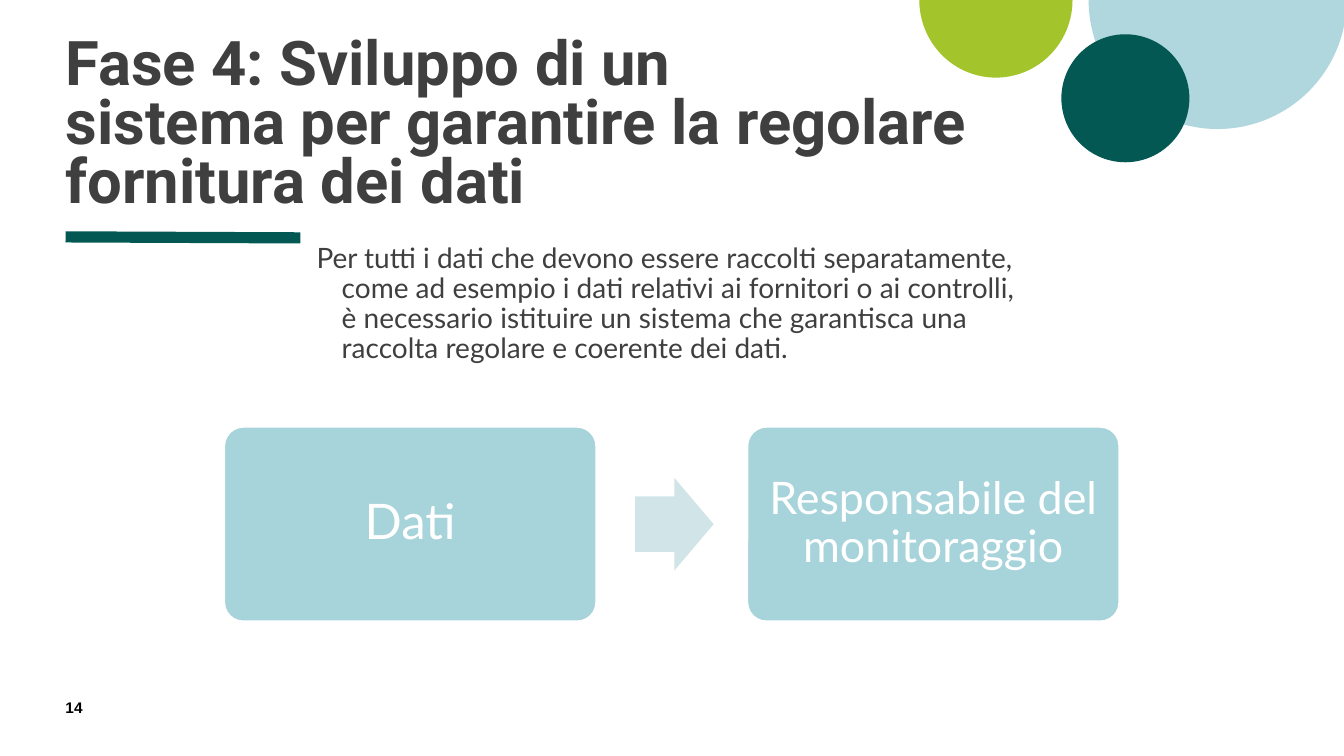
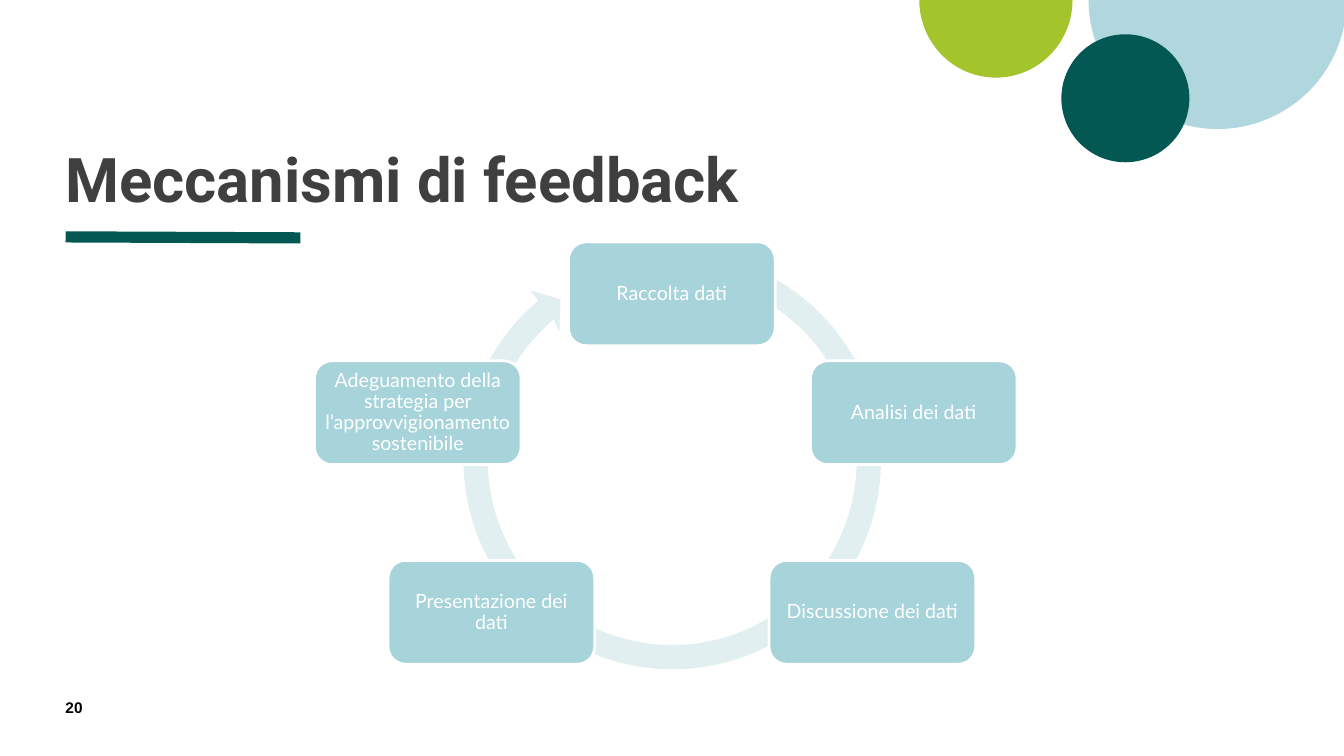
from dataclasses import dataclass
from math import cos, radians, sin, tan

from lxml import etree
from pptx import Presentation
from pptx.dml.color import RGBColor
from pptx.enum.shapes import MSO_CONNECTOR, MSO_SHAPE
from pptx.enum.text import MSO_ANCHOR, MSO_AUTO_SIZE, PP_ALIGN
from pptx.oxml.ns import qn
from pptx.shapes.autoshape import Shape
from pptx.slide import Slide, SlideLayout
from pptx.text.text import TextFrame, _Paragraph
from pptx.util import Inches, Pt

ROUNDED, ARROW = MSO_SHAPE.ROUNDED_RECTANGLE, MSO_SHAPE.RIGHT_ARROW
PIE, OVAL = MSO_SHAPE.PIE, MSO_SHAPE.OVAL
STRAIGHT = MSO_CONNECTOR.STRAIGHT
TOP, MIDDLE, BOTTOM = MSO_ANCHOR.TOP, MSO_ANCHOR.MIDDLE, MSO_ANCHOR.BOTTOM
LEFT, CENTER = PP_ALIGN.LEFT, PP_ALIGN.CENTER
NO_AUTOFIT = MSO_AUTO_SIZE.NONE
TITLE_ONLY = 5

Point = tuple[float, float]


@dataclass(frozen=True)
class Theme:
    dark_green: str = "035854"
    lime: str = "A3C42A"
    sky: str = "AFD7DD"
    card: str = "A7D3DA"
    arrow: str = "D1E5E9"
    ring: str = "E1EFF1"
    ink: str = "3F3F3F"
    black: str = "000000"
    white: str = "FFFFFF"
    title_font: str = "Roboto"
    body_font: str = "Lato"
    number_font: str = "Arial"
    title_size: int = 44
    body_size: int = 20
    number_size: int = 11
    cycle_size: int = 14


THEME = Theme()


@dataclass(frozen=True)
class Area:
    left: float
    top: float
    width: float
    height: float

    def lengths(self) -> tuple[Inches, ...]:
        return tuple(Inches(v) for v in (self.left, self.top, self.width, self.height))


@dataclass(frozen=True)
class TextStyle:
    font: str
    size: int
    color: str
    bold: bool = False
    spacing: float = 1.0
    align: PP_ALIGN = LEFT


@dataclass(frozen=True)
class Circle:
    kind: MSO_SHAPE
    area: Area
    color: str


@dataclass(frozen=True)
class CardLook:
    width: float
    height: float
    rounding: float
    inset: float


@dataclass(frozen=True)
class Card:
    label: str
    left: float
    top: float
    size: int


TITLE_STYLE = TextStyle(THEME.title_font, THEME.title_size, THEME.ink, True, 0.8)
BODY_STYLE = TextStyle(THEME.body_font, THEME.body_size, THEME.ink, spacing=0.9)
NUMBER_STYLE = TextStyle(THEME.number_font, THEME.number_size, THEME.black, True)

CIRCLES = (
    Circle(PIE, Area(10.8, -1.28, 2.56, 2.56), THEME.sky),
    Circle(PIE, Area(9.12, -0.77, 1.52, 1.54), THEME.lime),
    Circle(OVAL, Area(10.53, 0.34, 1.27, 1.27), THEME.dark_green),
)

FLOW_LOOK = CardLook(3.7, 1.94, 0.1, 0.15)
FLOW_CARDS = (
    Card("Dati", 2.22, 4.23, 35),
    Card("Responsabile del monitoraggio", 7.41, 4.23, 32),
)

CYCLE_LOOK = CardLook(2.05, 1.03, 0.167, 0.05)
CYCLE_CARDS = tuple(
    Card(label, left, top, THEME.cycle_size)
    for label, left, top in (
        ("Raccolta dati", 5.64, 2.4),
        ("Analisi dei dati", 8.04, 3.58),
        ("Discussione dei dati", 7.63, 5.56),
        ("Presentazione dei dati", 3.85, 5.56),
        ("Adeguamento della strategia per l’approvvigionamento sostenibile", 3.12, 3.58),
    )
)

RING_CENTER = (6.67, 4.57)
RING_OUTER, RING_INNER = 2.07, 1.83
RING_START, RING_END = -70, 230
RING_CURVES = 4
RING_HEAD = [(5.26, 2.88), (5.56, 2.97), (5.55, 3.3)]


def rgb(color: str) -> RGBColor:
    return RGBColor.from_string(color)


def write_text(frame: TextFrame, text: str, style: TextStyle,
               anchor: MSO_ANCHOR = TOP, inset: float = 0) -> _Paragraph:
    frame.word_wrap = True
    frame.auto_size = NO_AUTOFIT
    frame.vertical_anchor = anchor
    frame.margin_left = frame.margin_right = Inches(inset)
    frame.margin_top = frame.margin_bottom = Inches(inset)
    para = frame.paragraphs[0]
    para.text = text
    para.alignment = style.align
    para.line_spacing = style.spacing
    para.font.name = style.font
    para.font.size = Pt(style.size)
    para.font.bold = style.bold
    para.font.color.rgb = rgb(style.color)
    return para


def paint(shape: Shape, color: str) -> None:
    shape.shadow.inherit = False
    shape.fill.solid()
    shape.fill.fore_color.rgb = rgb(color)
    shape.line.fill.background()


def add_filled(page: Slide, kind: MSO_SHAPE, area: Area, color: str) -> Shape:
    shape = page.shapes.add_shape(kind, *area.lengths())
    paint(shape, color)
    return shape


def decorate_layout(layout: SlideLayout, page: Slide) -> None:
    rule = page.shapes.add_connector(
        STRAIGHT, Inches(0.65), Inches(2.35), Inches(2.98), Inches(2.36))
    rule.line.color.rgb = rgb(THEME.dark_green)
    rule.line.width = Pt(8)
    etree.SubElement(rule.element.spPr, qn("a:effectLst"))
    decorations = [rule]
    for circle in CIRCLES:
        shape = add_filled(page, circle.kind, circle.area, circle.color)
        if circle.kind == PIE:
            shape.adjustments[0] = 0
            shape.adjustments[1] = 108
        decorations.append(shape)
    for decoration in decorations:
        layout.shapes.element.append(decoration.element)


def add_heading(page: Slide, text: str, area: Area, number: str) -> None:
    title = page.shapes.title
    title.left, title.top, title.width, title.height = area.lengths()
    write_text(title.text_frame, text, TITLE_STYLE, BOTTOM)
    box = page.shapes.add_textbox(*Area(0.65, 6.93, 0.57, 0.27).lengths())
    write_text(box.text_frame, number, NUMBER_STYLE)


def add_card(page: Slide, card: Card, look: CardLook) -> None:
    area = Area(card.left, card.top, look.width, look.height)
    shape = add_filled(page, ROUNDED, area, THEME.card)
    shape.adjustments[0] = look.rounding
    shape.line.color.rgb = rgb(THEME.white)
    shape.line.width = Pt(2)
    style = TextStyle(THEME.body_font, card.size, THEME.white, spacing=0.9, align=CENTER)
    write_text(shape.text_frame, card.label, style, MIDDLE, look.inset)


def arc_points(radius: float, start: float, end: float) -> list[Point]:
    step = radians(end - start) / RING_CURVES
    reach = 4 / 3 * tan(step / 4)
    center_x, center_y = RING_CENTER

    def place(angle: float, along: float) -> Point:
        return (center_x + radius * (cos(angle) - along * sin(angle)),
                center_y + radius * (sin(angle) + along * cos(angle)))

    points = [place(radians(start), 0)]
    for index in range(RING_CURVES):
        angle = radians(start) + index * step
        points += [place(angle, reach), place(angle + step, -reach), place(angle + step, 0)]
    return points


def bend(segments: list) -> None:
    for index in range(0, len(segments), 3):
        curve = etree.Element(qn("a:cubicBezTo"))
        segments[index].addprevious(curve)
        for segment in segments[index:index + 3]:
            curve.append(segment[0])
            segment.getparent().remove(segment)


def add_ring(page: Slide) -> None:
    outer = arc_points(RING_OUTER, RING_START, RING_END)
    inner = arc_points(RING_INNER, RING_END, RING_START)
    points = [(Inches(x), Inches(y)) for x, y in outer + RING_HEAD + inner]
    builder = page.shapes.build_freeform(*points[0])
    builder.add_line_segments(points[1:], close=True)
    ring = builder.convert_to_shape()
    paint(ring, THEME.ring)
    segments = list(ring.element.iter(qn("a:lnTo")))
    count = 3 * RING_CURVES
    bend(segments[:count])
    bend(segments[-count:])


def build_flow_slide(page: Slide) -> None:
    add_heading(
        page,
        "Fase 4: Sviluppo di un \vsistema per garantire la regolare \vfornitura dei dati",
        Area(0.65, 0.51, 11.69, 1.63), "14")
    box = page.shapes.add_textbox(*Area(2.89, 2.37, 7.21, 1.94).lengths())
    para = write_text(
        box.text_frame,
        "Per tutti i dati che devono essere raccolti separatamente, come ad esempio "
        "i dati relativi ai fornitori o ai controlli, è necessario istituire un sistema "
        "che garantisca una raccolta regolare e coerente dei dati.",
        BODY_STYLE)
    box.text_frame.margin_top = Inches(0.05)
    properties = para._p.get_or_add_pPr()
    properties.set("marL", str(Inches(0.5)))
    properties.set("indent", str(Inches(-0.25)))
    for card in FLOW_CARDS:
        add_card(page, card, FLOW_LOOK)
    arrow = add_filled(page, ARROW, Area(6.3, 4.74, 0.78, 0.92), THEME.arrow)
    arrow.adjustments[0] = 0.6
    arrow.adjustments[1] = 0.5


def build_cycle_slide(page: Slide) -> None:
    add_heading(page, "Meccanismi di feedback", Area(0.65, 0.5, 10.69, 1.63), "20")
    add_ring(page)
    for card in CYCLE_CARDS:
        add_card(page, card, CYCLE_LOOK)


def main() -> None:
    deck = Presentation()
    deck.slide_width, deck.slide_height = Inches(40) // 3, Inches(7.5)
    layout = deck.slide_layouts[TITLE_ONLY]
    flow_page = deck.slides.add_slide(layout)
    decorate_layout(layout, flow_page)
    build_flow_slide(flow_page)
    build_cycle_slide(deck.slides.add_slide(layout))
    deck.save("out.pptx")


if __name__ == "__main__":
    main()
